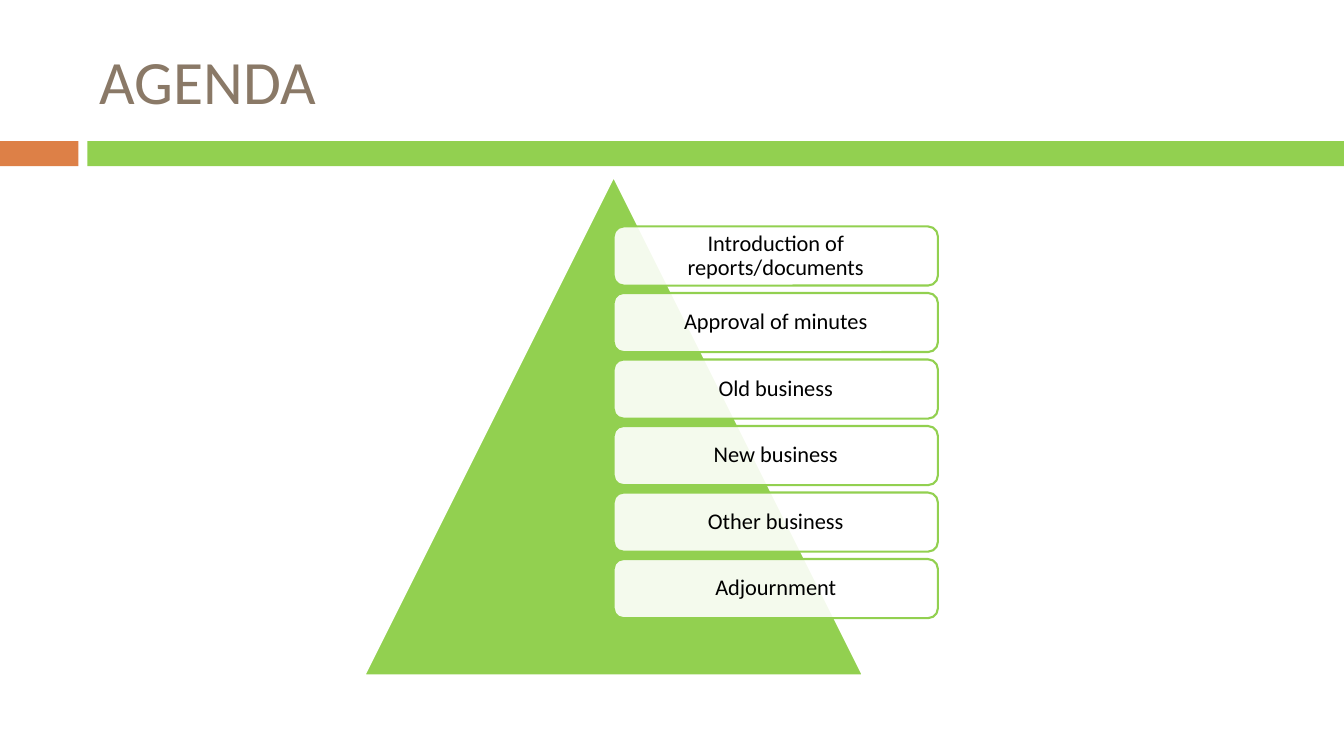
import pptx
import pptx.dml.color
import pptx.enum.shapes
import pptx.enum.text
import pptx.oxml
import pptx.oxml.ns
import pptx.util

Cm = pptx.util.Cm
Pt = pptx.util.Pt
RGBColor = pptx.dml.color.RGBColor
Shape = pptx.enum.shapes.MSO_SHAPE

GREEN = RGBColor(0x92, 0xD0, 0x50)
ORANGE = RGBColor(0xDD, 0x80, 0x47)
BROWN = RGBColor(0x8A, 0x79, 0x67)
WHITE = RGBColor(0xFF, 0xFF, 0xFF)
BLACK = RGBColor(0x00, 0x00, 0x00)

FONT = "Calibri"
PAGE_WIDTH, PAGE_HEIGHT = Cm(33.87), Cm(19.05)
AGENDA_ITEMS = [
    "Introduction of reports/documents",
    "Approval of minutes",
    "Old business",
    "New business",
    "Other business",
    "Adjournment",
]


def add_filled_shape(page, kind, left, top, width, height, fill, line=None):
    shape = page.shapes.add_shape(kind, left, top, width, height)
    shape.shadow.inherit = False
    shape.fill.solid()
    shape.fill.fore_color.rgb = fill
    if line is None:
        shape.line.fill.background()
    else:
        shape.line.color.rgb = line
        shape.line.width = Pt(1.5)
    return shape


def set_opacity(shape, percent):
    color = shape.fill._xPr.find(".//" + pptx.oxml.ns.qn("a:srgbClr"))
    alpha = pptx.oxml.parse_xml(
        f'<a:alpha {pptx.oxml.ns.nsdecls("a")} val="{percent * 1000}"/>')
    color.append(alpha)


def write_text(box, text, size, color, align):
    frame = box.text_frame
    frame.word_wrap = True
    frame.vertical_anchor = pptx.enum.text.MSO_ANCHOR.MIDDLE
    para = frame.paragraphs[0]
    para.alignment = align
    span = para.add_run()
    span.text = text
    span.font.name = FONT
    span.font.size = Pt(size)
    span.font.color.rgb = color
    return para


def add_title(page, left, top, width, height):
    box = page.shapes.add_textbox(left, top, width, height)
    write_text(box, "AGENDA", 44, BROWN, pptx.enum.text.PP_ALIGN.LEFT)


def add_band(page, left, top, width, height):
    # Short orange block, a gap, then green to the right edge
    block, gap = Cm(1.98), Cm(0.22)
    add_filled_shape(page, Shape.RECTANGLE, left, top, block, height, ORANGE)
    add_filled_shape(page, Shape.RECTANGLE, left + block + gap, top,
                     width - block - gap, height, GREEN)


def add_pyramid_list(page, left, top, side):
    # Pyramid
    add_filled_shape(page, Shape.ISOSCELES_TRIANGLE, left, top, side, side,
                     GREEN, WHITE)

    # Cards start on the pyramid's axis; gaps are an eighth of a card
    card_left = left + side // 2
    first_top = top + round(side * 0.1)
    card_width = round(side * 0.65)
    card_height = Cm(1.49)
    pitch = card_height * 9 // 8
    for index, item in enumerate(AGENDA_ITEMS):
        card = add_filled_shape(page, Shape.ROUNDED_RECTANGLE, card_left,
                                first_top + index * pitch, card_width,
                                card_height, WHITE, GREEN)
        set_opacity(card, 90)
        frame = card.text_frame
        frame.margin_left = frame.margin_right = Cm(0.17)
        frame.margin_top = frame.margin_bottom = Cm(0.17)
        para = write_text(card, item, 16, BLACK,
                          pptx.enum.text.PP_ALIGN.CENTER)
        para.line_spacing = 0.9


def main():
    deck = pptx.Presentation()
    deck.slide_width, deck.slide_height = PAGE_WIDTH, PAGE_HEIGHT
    page = deck.slides.add_slide(deck.slide_layouts[6])
    add_band(page, 0, Cm(3.56), PAGE_WIDTH, Cm(0.63))
    add_title(page, Cm(2.26), Cm(0.64), Cm(30.2), Cm(2.74))
    add_pyramid_list(page, Cm(9.18), Cm(4.45), Cm(12.57))
    deck.save("out.pptx")


if __name__ == "__main__":
    main()
